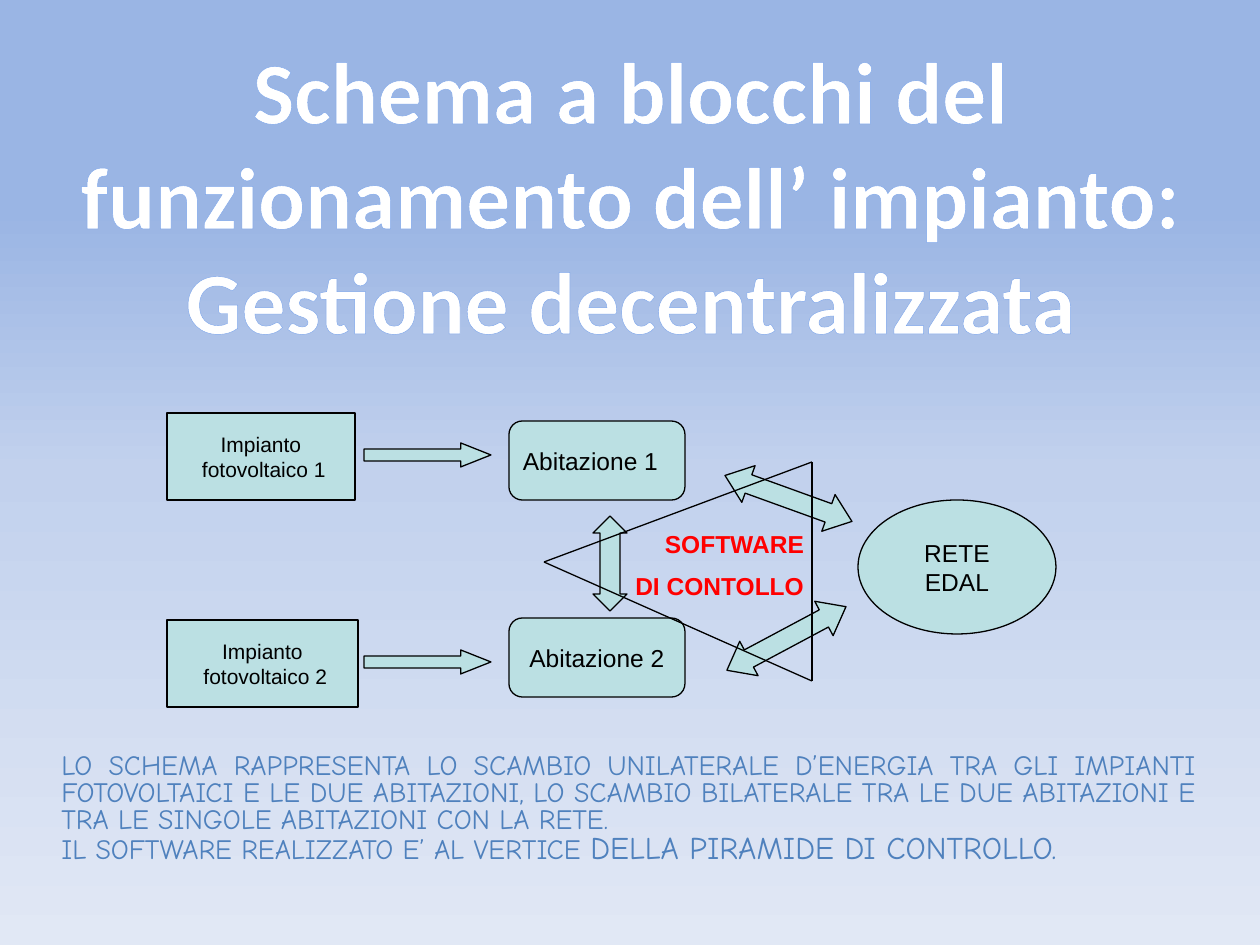
from lxml.etree import SubElement
from pptx import Presentation
from pptx.dml.color import RGBColor
from pptx.enum.shapes import MSO_CONNECTOR, MSO_SHAPE
from pptx.enum.text import MSO_ANCHOR, MSO_AUTO_SIZE, PP_ALIGN
from pptx.oxml.ns import qn
from pptx.util import Emu, Pt

COLORS = {
    "block": "BBE0E3", "line": "000000", "title": "FFFFFF", "title_edge": "7EA6EA",
    "software": "FF0000", "description": "4F81BD",
}
SKY = [(0, "9AB5E4"), (22, "9AB5E4"), (50, "C2D1ED"), (100, "E1E8F5")]


def px(length):
    return Emu(round(length * 914400 / 126))


def rgb(name):
    return RGBColor.from_string(COLORS[name])


def paint_background(slide):
    fill = slide.background.fill
    fill.gradient()
    fill.gradient_angle = 270
    stops = slide.element.find(".//" + qn("a:gsLst"))
    for stop in list(stops):
        stops.remove(stop)
    for percent, color in SKY:
        stop = SubElement(stops, qn("a:gs"), pos=str(percent * 1000))
        SubElement(stop, qn("a:srgbClr"), val=color)


def add_run(paragraph, text, size, color="line", font="Arial", bold=False):
    run = paragraph.add_run()
    run.text = text
    run.font.size = Pt(size)
    run.font.name = font
    run.font.bold = bold
    run.font.color.rgb = rgb(color)
    return run


def get_paragraph(frame, index):
    return frame.add_paragraph() if index else frame.paragraphs[0]


def set_title(slide, text):
    title = slide.shapes.title
    title.left, title.top, title.width, title.height = map(px, (50, 30, 1162, 331))
    frame = title.text_frame
    frame.auto_size = MSO_AUTO_SIZE.NONE
    frame.vertical_anchor = MSO_ANCHOR.TOP
    frame.word_wrap = True
    paragraph = frame.paragraphs[0]
    paragraph.alignment = PP_ALIGN.CENTER
    run = add_run(paragraph, text, 50, "title", "Calibri", True)
    # Letter outline comes before the fill in the run properties
    properties = run._r.get_or_add_rPr()
    edge = properties.makeelement(qn("a:ln"), {"w": str(Pt(2.48))})
    SubElement(SubElement(edge, qn("a:solidFill")), qn("a:srgbClr"), val=COLORS["title_edge"])
    properties.insert(0, edge)


def add_block(slide, kind, box, lines=(), size=14, align=PP_ALIGN.CENTER,
              wrap=True, adjust=(), angle=0):
    block = slide.shapes.add_shape(kind, *map(px, box))
    block.shadow.inherit = False
    block.fill.solid()
    block.fill.fore_color.rgb = rgb("block")
    block.line.color.rgb = rgb("line")
    block.line.width = Pt(0.75)
    block.rotation = angle
    for index, value in enumerate(adjust):
        block.adjustments[index] = value
    frame = block.text_frame
    frame.word_wrap = wrap
    frame.vertical_anchor = MSO_ANCHOR.MIDDLE
    frame.margin_left = frame.margin_right = px(10)
    frame.margin_top = frame.margin_bottom = px(5)
    for index, line in enumerate(lines):
        paragraph = get_paragraph(frame, index)
        paragraph.alignment = align
        add_run(paragraph, line, size)


def add_edge(slide, start, end):
    edge = slide.shapes.add_connector(MSO_CONNECTOR.STRAIGHT, *map(px, start + end))
    edge.line.color.rgb = rgb("line")
    edge.line.width = Pt(0.75)
    SubElement(edge._element.spPr, qn("a:effectLst"))


def add_text(slide, box):
    frame = slide.shapes.add_textbox(*map(px, box)).text_frame
    frame.word_wrap = True
    return frame


def add_software_label(slide):
    frame = add_text(slide, (624, 523, 208, 86))
    frame.margin_left, frame.margin_right = px(0), px(28)
    for index, line in enumerate(("SOFTWARE", "DI CONTOLLO")):
        paragraph = get_paragraph(frame, index)
        paragraph.alignment = PP_ALIGN.RIGHT
        paragraph.space_before = Pt(7 * index)
        add_run(paragraph, line, 14, "software", bold=True)


def add_description(slide, paragraphs):
    frame = add_text(slide, (49, 748, 1160, 166))
    for index, runs in enumerate(paragraphs):
        paragraph = get_paragraph(frame, index)
        paragraph.alignment = PP_ALIGN.JUSTIFY
        paragraph.line_spacing = 0.8
        for text, size in runs:
            add_run(paragraph, text, size, "description", "Comic Neue")


def main():
    prs = Presentation()
    prs.slide_width, prs.slide_height = px(1260), px(945)
    slide = prs.slides.add_slide(prs.slide_layouts[5])
    paint_background(slide)
    set_title(slide, "Schema a blocchi del funzionamento dell’ impianto: "
                     "Gestione decentralizzata")

    # One row per home: plant, one-way arrow, home
    rows = [(1, 413, 188, 421, PP_ALIGN.LEFT), (2, 620, 191, 618, PP_ALIGN.CENTER)]
    for number, plant_top, plant_width, home_top, align in rows:
        add_block(slide, MSO_SHAPE.RECTANGLE, (167, plant_top, plant_width, 87),
                  ("Impianto", f" fotovoltaico {number}"), 12, wrap=False)
        add_block(slide, MSO_SHAPE.RIGHT_ARROW, (364, plant_top + 30, 127, 24),
                  adjust=(0.5, 1.26))
        add_block(slide, MSO_SHAPE.ROUNDED_RECTANGLE, (509, home_top, 176, 79),
                  (f"Abitazione {number}",), align=align, adjust=(0.17,))

    # Grid and two-way exchanges
    add_block(slide, MSO_SHAPE.OVAL, (858, 500, 198, 134), ("RETE EDAL",))
    for box, angle in (((721, 479, 135, 39), 19.9), ((719, 619, 135, 39), 331.9)):
        add_block(slide, MSO_SHAPE.LEFT_RIGHT_ARROW, box, adjust=(0.5, 0.64), angle=angle)
    add_block(slide, MSO_SHAPE.UP_DOWN_ARROW, (593, 516, 34, 95), adjust=(0.5, 0.59))

    # Control pyramid
    apex, upper, lower = (544, 562), (812, 462), (812, 681)
    for start, end in ((apex, upper), (apex, lower), (lower, upper)):
        add_edge(slide, start, end)
    add_software_label(slide)

    # Explanation below the diagram
    add_description(slide, [
        [("LO SCHEMA RAPPRESENTA LO SCAMBIO UNILATERALE D’ENERGIA TRA GLI IMPIANTI "
          "FOTOVOLTAICI E LE DUE ABITAZIONI, LO SCAMBIO BILATERALE TRA LE DUE ABITAZIONI "
          "E TRA LE SINGOLE ABITAZIONI CON LA RETE.", 16)],
        [("IL SOFTWARE REALIZZATO E’ AL VERTICE ", 16),
         ("DELLA PIRAMIDE DI CONTROLLO.", 18)],
    ])
    prs.save("out.pptx")


if __name__ == "__main__":
    main()
